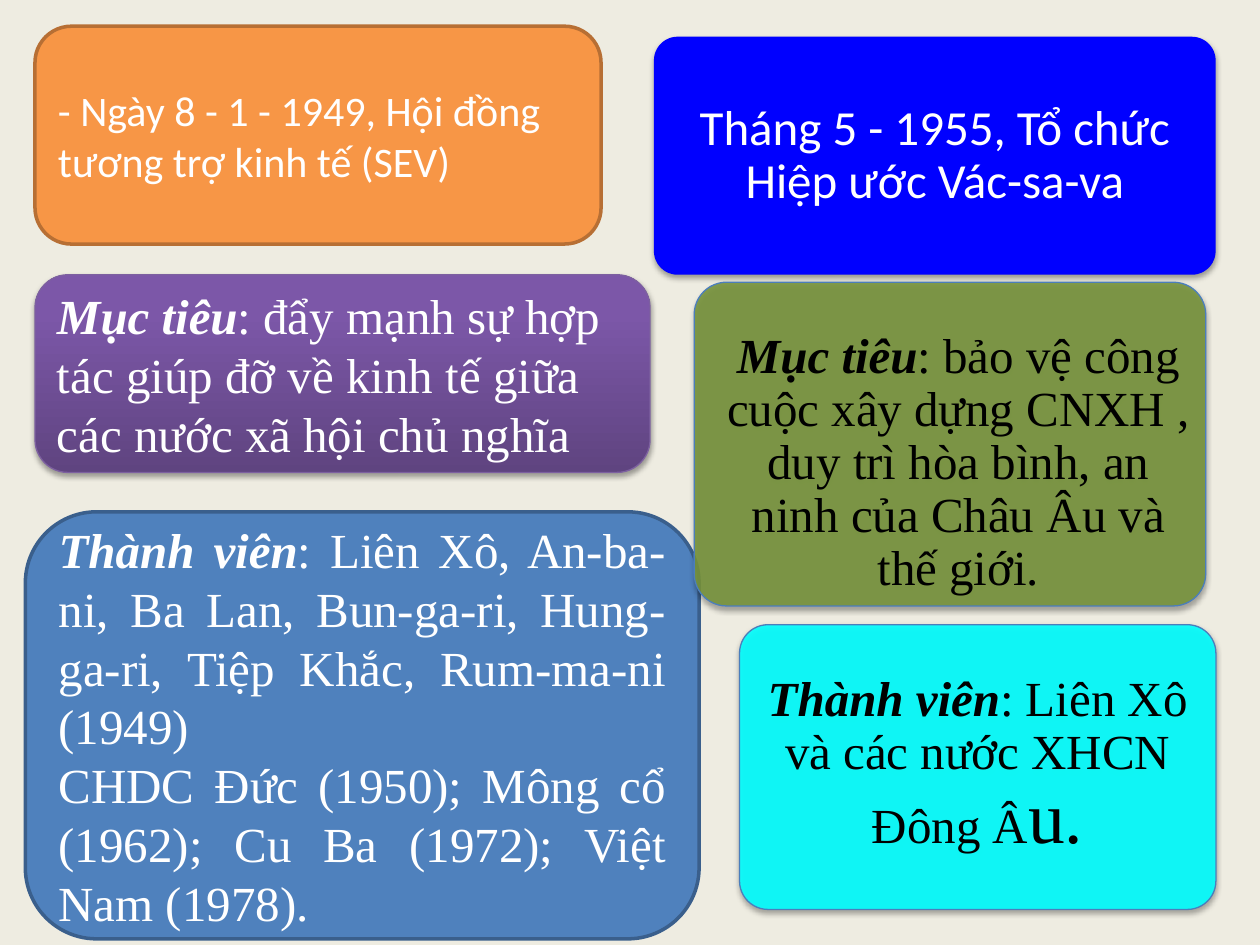
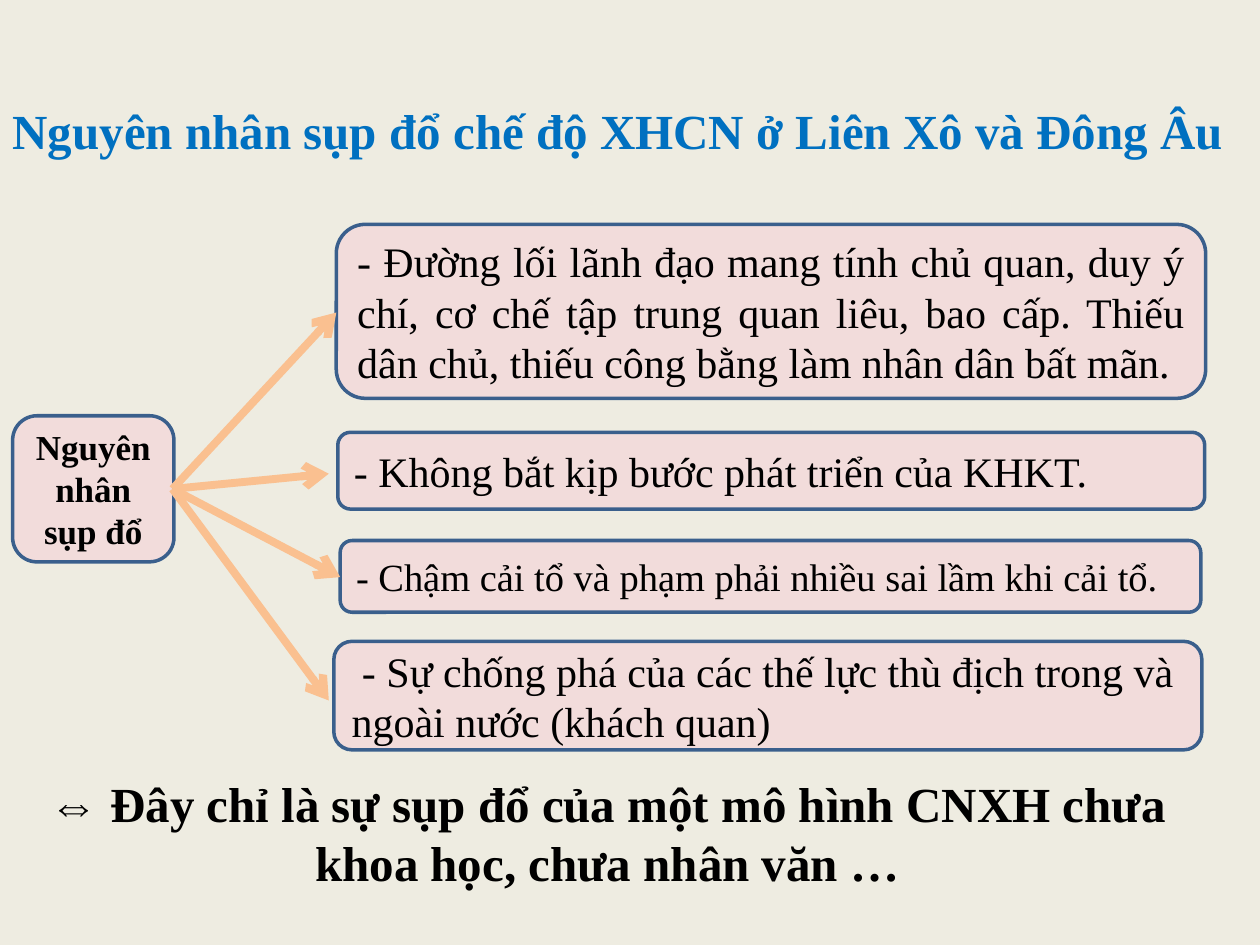
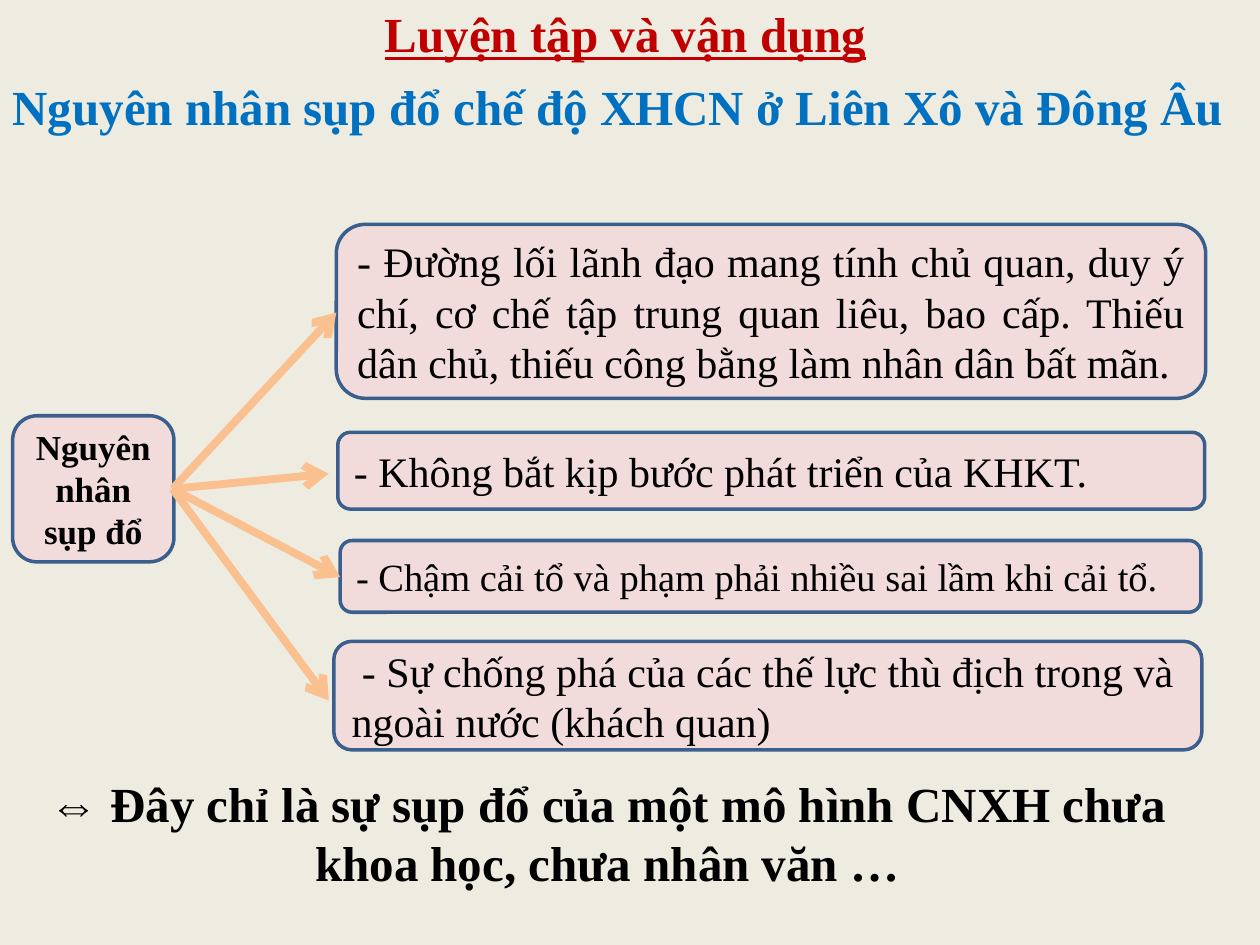
from lxml import etree
from pptx import Presentation
from pptx.dml.color import RGBColor
from pptx.enum import shapes as sh, text as tx
from pptx.oxml import ns
from pptx.util import Pt

HUES = {
    "back": "EEECE1", "white": "FFFFFF", "black": "000000",
    "orange": "F79646", "rust": "B76F34", "blue": "4F81BD", "navy": "3A5F8C",
    "plum": "5F4480", "violet": "7C57A8", "purple": "7D60A0",
    "royal": "0000FF", "olive": "77933C", "cyan": "00FFFF", "edge": "4B7EBC",
    "rose": "F2DCDB", "peach": "FAC090", "sky": "0070C0", "red": "C00000",
}
SERIF, SANS = "Times New Roman", "Calibri"
LEFT, MID, JUST = tx.PP_ALIGN.LEFT, tx.PP_ALIGN.CENTER, tx.PP_ALIGN.JUSTIFY
TITLE_ONLY, BLANK = 5, 6


def hue(name):
    return RGBColor.from_string(HUES[name])


def sub(node, tag, **attrs):
    return etree.SubElement(node, ns.qn(tag), **attrs)


class Deck:
    def __init__(self):
        self.prs = Presentation()
        self.prs.slide_width, self.prs.slide_height = Pt(720), Pt(540)
        self.slide = None

    def page(self, layout):
        self.slide = self.prs.slides.add_slide(self.prs.slide_layouts[layout])
        fill = self.slide.background.fill
        fill.solid()
        fill.fore_color.rgb = hue("back")

    def put(self, frame, paras, size=28, color="black", font=SERIF,
            align=LEFT, bold=False, lines=None):
        """Each paragraph is a string, or a (lead, rest, large end) tuple."""
        frame.word_wrap = True
        for i, para in enumerate(paras):
            p = frame.paragraphs[0] if i == 0 else frame.add_paragraph()
            p.alignment, p.line_spacing = align, lines
            p.font.size, p.font.name, p.font.bold = Pt(size), font, bold
            p.font.color.rgb = hue(color)
            parts = (para,) if isinstance(para, str) else para
            runs = [p.add_run() for _ in parts]
            for run, part in zip(runs, parts):
                run.text = part
            if len(runs) > 1:
                runs[0].font.bold = runs[0].font.italic = True
            if len(runs) > 2:
                runs[2].font.size = Pt(42)

    def inset(self, frame, left, top, right, bottom):
        frame.margin_left, frame.margin_top = Pt(left), Pt(top)
        frame.margin_right, frame.margin_bottom = Pt(right), Pt(bottom)

    def box(self, at, paras, fill, line=None, width=2, round=None,
            alpha=None, shade=False, inset=None, **style):
        """Rounded box with text; a pair of fills makes a gradient."""
        box = self.slide.shapes.add_shape(
            sh.MSO_SHAPE.ROUNDED_RECTANGLE, *map(Pt, at))
        box.shadow.inherit = False
        if round:
            box.adjustments[0] = round
        if isinstance(fill, tuple):
            box.fill.gradient()
            box.fill.gradient_angle = 90
            for stop, name, place in zip(box.fill.gradient_stops, fill, (0, 0.8)):
                stop.color.rgb, stop.position = hue(name), place
        else:
            box.fill.solid()
            box.fill.fore_color.rgb = hue(fill)
        if alpha:
            color = box._element.spPr.find(
                ns.qn("a:solidFill") + "/" + ns.qn("a:srgbClr"))
            sub(color, "a:alpha", val=str(alpha * 1000))
        if line:
            box.line.color.rgb, box.line.width = hue(line), Pt(width)
        else:
            box.line.fill.background()
        if shade:
            self.shade(box)
        frame = box.text_frame
        frame.vertical_anchor = tx.MSO_ANCHOR.MIDDLE
        if inset:
            self.inset(frame, *inset)
        self.put(frame, paras, **style)

    def shade(self, box):
        effects = box._element.spPr.find(ns.qn("a:effectLst"))
        drop = sub(effects, "a:outerShdw", blurRad=str(Pt(3.1)),
                   dist=str(Pt(1.8)), dir="5400000", rotWithShape="0")
        color = sub(drop, "a:srgbClr", val=HUES["black"])
        sub(color, "a:alpha", val="35000")

    def label(self, at, paras, **style):
        box = self.slide.shapes.add_textbox(*map(Pt, at))
        self.put(box.text_frame, paras, **style)

    def arrow(self, start, end):
        link = self.slide.shapes.add_connector(
            sh.MSO_CONNECTOR.STRAIGHT, *map(Pt, start + end))
        link.line.color.rgb, link.line.width = hue("peach"), Pt(4.5)
        props = link._element.spPr
        sub(props.find(ns.qn("a:ln")), "a:tailEnd", type="arrow")
        sub(props, "a:effectLst")

    def title(self, paras, foot):
        """Title sitting on its lower edge, raised by foot."""
        head = self.slide.shapes.title
        head.left, head.top, head.width, head.height = map(Pt, (0, 9.4, 715, 90))
        frame = head.text_frame
        frame.auto_size = tx.MSO_AUTO_SIZE.NONE
        frame.vertical_anchor = tx.MSO_ANCHOR.BOTTOM
        self.inset(frame, 7.2, 0, 7.2, foot)
        self.put(frame, paras, color="sky", bold=True, lines=0.6)
        if len(paras) > 1:
            first, last = frame.paragraphs
            first.alignment, first.font.underline = MID, True
            first.font.color.rgb = hue("red")
            last.space_before = Pt(21.3)


def pacts(deck):
    deck.page(BLANK)
    # Economic council
    deck.box((20, 15, 323.5, 124.5),
             ["- Ngày 8 - 1 - 1949, Hội đồng tương trợ kinh tế (SEV)"],
             "orange", "rust", size=24, font=SANS, color="white")
    deck.box((20, 157, 351.5, 113),
             [("Mục tiêu", ": đẩy mạnh sự hợp tác giúp đỡ về kinh tế giữa "
               "các nước xã hội chủ nghĩa")],
             ("plum", "violet"), "purple", 0.75, shade=True, color="white")
    deck.box((14.5, 292.5, 385, 244),
             [("Thành viên", ": Liên Xô, An-ba-ni, Ba Lan, Bun-ga-ri, "
               "Hung-ga-ri, Tiệp Khắc, Rum-ma-ni (1949)"),
              "CHDC Đức (1950); Mông cổ (1962); Cu Ba (1972); Việt Nam (1978)."],
             "blue", "navy", color="white", align=JUST)
    # Military pact
    card = dict(width=0.75, round=0.1, shade=True, align=MID, lines=0.9)
    slim = (3.6, 3.6, 3.6, 3.6)
    deck.box((373.7, 21, 321, 136), ["Tháng 5 - 1955, Tổ chức Hiệp ước Vác-sa-va"],
             "royal", inset=slim, font=SANS, color="white", **card)
    deck.box((396.7, 161.3, 292.3, 185),
             [("Mục tiêu", ": bảo vệ công cuộc xây dựng CNXH , duy trì hòa bình, "
               "an ninh của Châu Âu và thế giới.")],
             "olive", "edge", alpha=90, inset=(9.7, 22, 0, 0), **card)
    deck.box((422.6, 357, 272.2, 162.7),
             [("Thành viên", ": Liên Xô và các nước XHCN Đông Â", "u.")],
             "cyan", "edge", alpha=90, inset=slim, **card)


CAUSES = [  # box, arrow tip, text, size, alignment
    ((192.2, 128.2, 496.8, 99.4), (192.2, 178.6),
     "- Đường lối lãnh đạo mang tính chủ quan, duy ý chí, cơ chế tập trung "
     "quan liêu, bao cấp. Thiếu dân chủ, thiếu công bằng làm nhân dân bất mãn.",
     24, JUST),
    ((193, 247, 495.4, 43.9), (187.9, 270.7),
     "- Không bắt kịp bước phát triển của KHKT.", 24, JUST),
    ((194.4, 308.9, 491.8, 41), (194.4, 329.8),
     "- Chậm cải tổ và phạm phải nhiều sai lầm khi cải tổ.", 22, JUST),
    ((190.8, 366.5, 496, 62), (187.9, 400.3),
     " - Sự chống phá của các thế lực thù địch trong và ngoài nước (khách quan)",
     24, LEFT),
]
TOPIC = "Nguyên nhân sụp đổ chế độ XHCN ở Liên Xô và Đông Âu"


def collapse(deck, heads, foot):
    deck.page(TITLE_ONLY)
    deck.title(heads, foot)
    # Root and its causes
    deck.box((7.2, 237.6, 92.2, 83.5), ["Nguyên nhân sụp đổ"], "rose", "navy",
             size=20, bold=True, align=MID)
    for at, tip, cause, size, align in CAUSES:
        deck.box(at, [cause], "rose", "navy", size=size, align=align)
        deck.arrow((98.6, 279.4), tip)
    # Conclusion
    deck.label((8, 438.5, 678, 75),
               ["⇔ Đây chỉ là sự sụp đổ của một mô hình CNXH chưa khoa học, "
                "chưa nhân văn …"], bold=True, align=MID)


def main():
    deck = Deck()
    pacts(deck)
    collapse(deck, [TOPIC], 10)
    collapse(deck, ["Luyện tập và vận dụng", TOPIC], 23.6)
    deck.prs.save("out.pptx")


if __name__ == "__main__":
    main()
